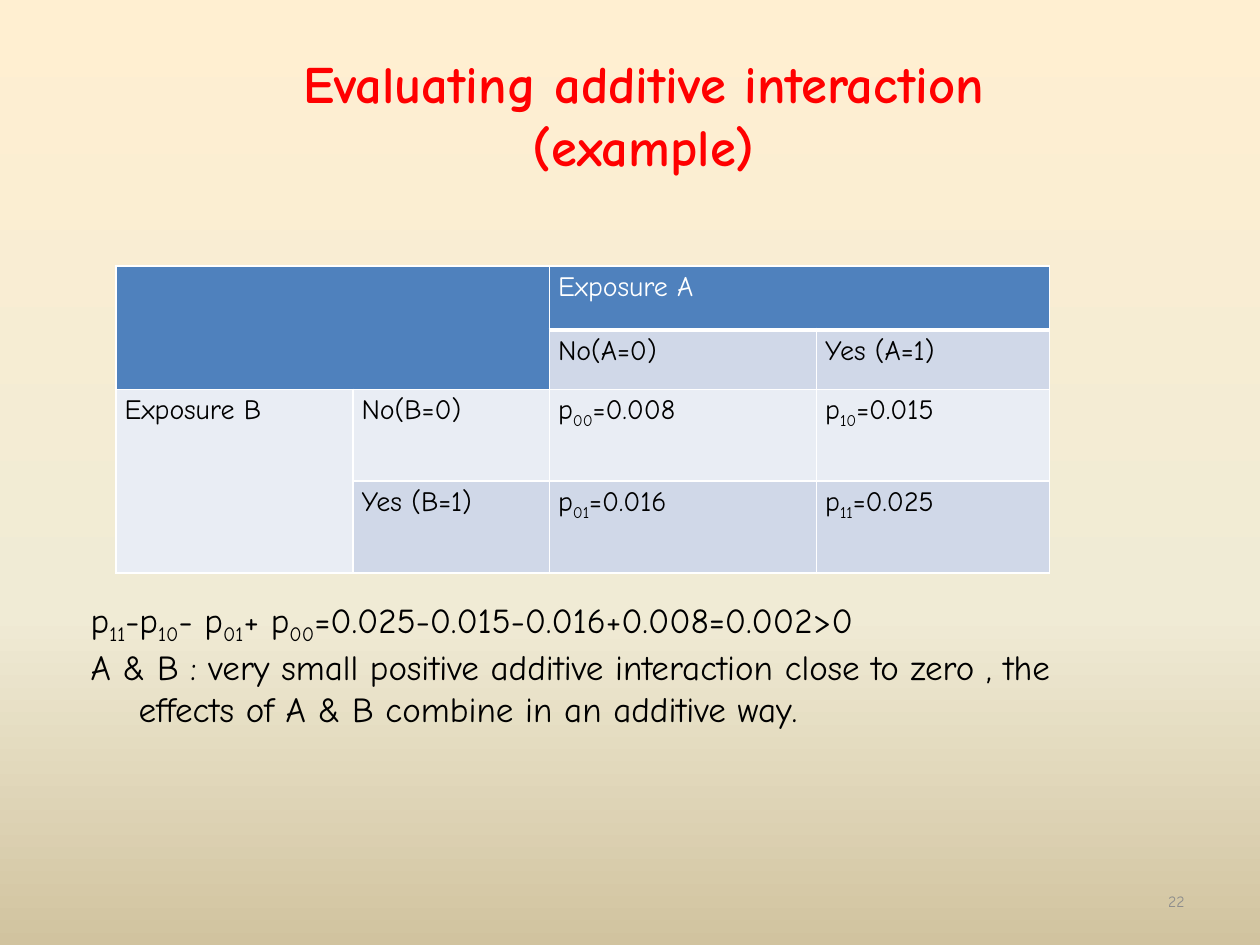
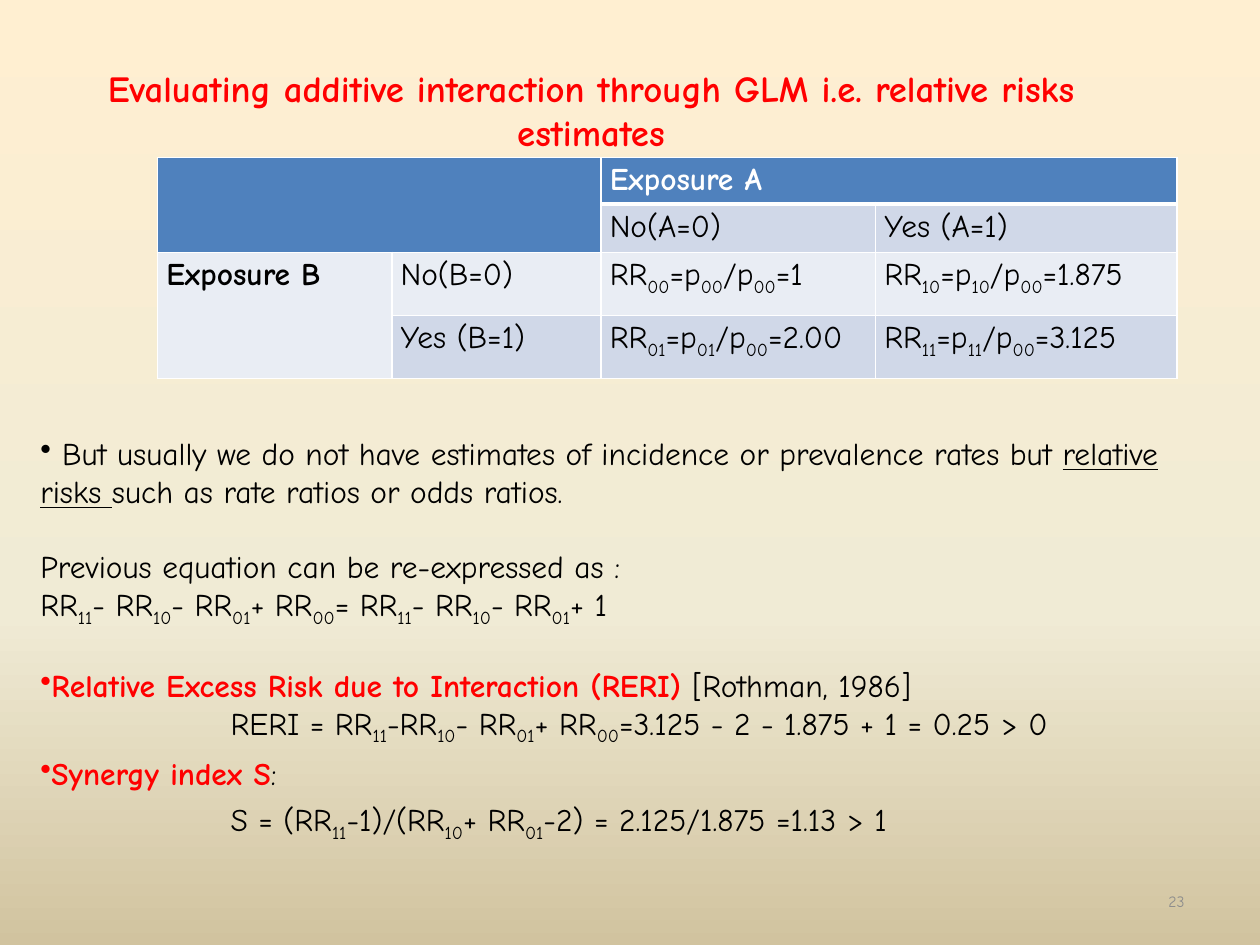
from copy import deepcopy
from lxml.etree import SubElement
from pptx import Presentation
from pptx.dml.color import RGBColor as RGB
from pptx.enum.text import MSO_ANCHOR as Anchor, PP_ALIGN as Align
from pptx.oxml.ns import qn
from pptx.util import Pt

SCALE = 9144  # 100 px to the inch
FONT = "Comic Neue"
RED, BLACK = RGB(255, 0, 0), RGB(0, 0, 0)
WHITE, GREY = RGB(255, 255, 255), RGB(0x8C, 0x8C, 0x8C)
BLUE = RGB(0x4F, 0x81, 0xBD)
DARK, PALE = RGB(0xD0, 0xD8, 0xE8), RGB(0xE9, 0xED, 0xF4)
FILLS = [BLUE, DARK, PALE, DARK]
STOPS = [(0, RGB(0xFF, 0xEF, 0xD1)), (0.65, RGB(0xF0, 0xEB, 0xD5)),
         (1, RGB(0xD1, 0xC3, 0x9F))]


def px(*nums):
    return [n * SCALE for n in nums]


# _.._ holds a subscript, |..| a marked phrase ("red" or "line")
def write(par, text, size, color=BLACK, bold=False, mark=None):
    for i, part in enumerate(text.split("|")):
        hot = i % 2 == 1
        for j, bit in enumerate(part.split("_")):
            if not bit:
                continue
            run = par.add_run()
            run.text = bit
            font = run.font
            font.name, font.size = FONT, Pt(size)
            red = hot and mark == "red"
            font.bold = bold or red
            font.color.rgb = RED if red else color
            if hot and mark == "line":
                font.underline = True
            if j % 2:
                run._r.get_or_add_rPr().set("baseline", "-25000")


# Body lines: text, mark (also gives a bullet), left, first indent, gap, pitch
PAGES = [
    dict(
        num="22", title="Evaluating additive interaction (example)",
        size=30, top=(136, 40, 750, 101),
        grid=(92, 211, 742, 245), cols=(188, 156, 212, 185),
        rows=(51, 47, 73, 73), cell=16, bold=False,
        vals=[("p_00_=0.008", "p_10_=0.015"),
              ("p_01_=0.016", "p_11_=0.025")],
        body=(65, 456, 824, 142), text=20,
        lines=[
            ("p_11_-p_10_- p_01_+ p_00_=0.025-0.015-0.016+0.008=0.002>0",
             None, 0, 0, 0, 1),
            ("A & B : very small positive additive interaction close to zero"
             " , the effects of A & B combine in an additive way.",
             None, 38, -38, 0, 1),
        ]),
    dict(
        num="23", title="Evaluating additive interaction through GLM i.e. "
                        "relative risks estimates",
        size=21, top=(67, 37, 804, 101),
        grid=(125, 125, 808, 171), cols=(186, 166, 218, 239),
        rows=(35, 36, 50, 50), cell=18, bold=True,
        vals=[("RR_00_=p_00_/p_00_=1", "RR_10_=p_10_/p_00_=1.875"),
              ("RR_01_=p_01_/p_00_=2.00", "RR_11_=p_11_/p_00_=3.125")],
        body=(25, 375, 925, 264), text=18,
        lines=[
            (" But usually we do not have estimates of incidence or prevalence"
             " rates but |relative risks |such as rate ratios or odds ratios.",
             "line", 0, 0, 0, 1),
            ("Previous equation can be re-expressed as :",
             None, 0, 0, 21.5, 1),
            ("RR_11_- RR_10_- RR_01_+ RR_00_= RR_11_- RR_10_- RR_01_+ 1",
             None, 0, 0, 0, 1),
            ("|Relative Excess Risk due to Interaction (RERI) |"
             "[Rothman, 1986]", "red", 0, 0, 21.5, 1),
            ("RERI = RR_11_-RR_10_- RR_01_+ RR_00_=3.125 - 2 - 1.875 + 1"
             " = 0.25 > 0", None, 151, 0, 0, 1),
            ("|Synergy index S|:", "red", 0, 0, 0, 1.2),
            ("S = (RR_11_-1)/(RR_10_+ RR_01_-2) = 2.125/1.875 =1.13 > 1",
             None, 151, 0, 0, 1.2),
        ]),
]

deck = Presentation()
deck.slide_width, deck.slide_height = px(1000, 750)

# Shared gradient background
master = deck.slide_master
fill = master.background.fill
fill.gradient()
fill.gradient_angle = 270
stops = master.element.xpath("./p:cSld/p:bg//a:gsLst")[0]
stops.append(deepcopy(stops[-1]))
for stop, (pos, color) in zip(fill.gradient_stops, STOPS):
    stop.position, stop.color.rgb = pos, color

for page in PAGES:
    slide = deck.slides.add_slide(deck.slide_layouts[5])
    shapes = slide.shapes

    # Title
    title = shapes.title
    title.left, title.top, title.width, title.height = px(*page["top"])
    title.text_frame.vertical_anchor = Anchor.MIDDLE
    par = title.text_frame.paragraphs[0]
    par.alignment = Align.CENTER
    write(par, page["title"], page["size"], RED, True)

    # Exposure table
    table = shapes.add_table(4, 4, *px(*page["grid"])).table
    for col, wide in zip(table.columns, px(*page["cols"])):
        col.width = wide
    for row, high in zip(table.rows, px(*page["rows"])):
        row.height = high
    low, high = page["vals"]
    words = [("", "", "Exposure A", ""),
             ("", "", "No(A=0)", "Yes (A=1)"),
             ("Exposure B", "No(B=0)", *low),
             ("", "Yes (B=1)", *high)]
    for r, line in enumerate(words):
        for c, word in enumerate(line):
            cell = table.cell(r, c)
            cell.margin_left = cell.margin_right = 7 * SCALE
            cell.margin_top = cell.margin_bottom = 4 * SCALE
            for side in "LRTB":
                thick = c > 1 and (r, side) in [(0, "B"), (1, "T")]
                edge = SubElement(cell._tc.get_or_add_tcPr(),
                                  qn("a:ln" + side),
                                  w=str(Pt(3 if thick else 1)))
                solid = SubElement(edge, qn("a:solidFill"))
                SubElement(solid, qn("a:srgbClr"), val=str(WHITE))
            cell.fill.solid()
            head = r < 2 and c < 2
            first = r > 1 and c == 0
            cell.fill.fore_color.rgb = (
                BLUE if head else PALE if first else FILLS[r])
            bold = page["bold"] and word.startswith("Exposure")
            write(cell.text_frame.paragraphs[0], word, page["cell"],
                  BLACK if r else WHITE, bold)
    for start, end in [((0, 0), (1, 1)), ((0, 2), (0, 3)), ((2, 0), (3, 0))]:
        table.cell(*start).merge(table.cell(*end))

    # Body text
    frame = shapes.add_textbox(*px(*page["body"])).text_frame
    frame.word_wrap = True
    frame.vertical_anchor = Anchor.MIDDLE
    frame.margin_left = frame.margin_right = 7 * SCALE
    frame.margin_top = frame.margin_bottom = 4 * SCALE
    for n, (text, mark, left, dent, gap, pitch) in enumerate(page["lines"]):
        par = frame.add_paragraph() if n else frame.paragraphs[0]
        props = par._p.get_or_add_pPr()
        props.set("marL", str(left * SCALE))
        props.set("indent", str(dent * SCALE))
        if mark:
            SubElement(props, qn("a:buChar"), char="•")
        if gap:
            par.space_before = Pt(gap)
        par.line_spacing = pitch
        write(par, text, page["text"], mark=mark)

    # Page number
    frame = shapes.add_textbox(*px(717, 695, 233, 40)).text_frame
    frame.word_wrap = True
    frame.vertical_anchor = Anchor.MIDDLE
    par = frame.paragraphs[0]
    par.alignment = Align.RIGHT
    write(par, page["num"], 9, GREY)

deck.save("out.pptx")
